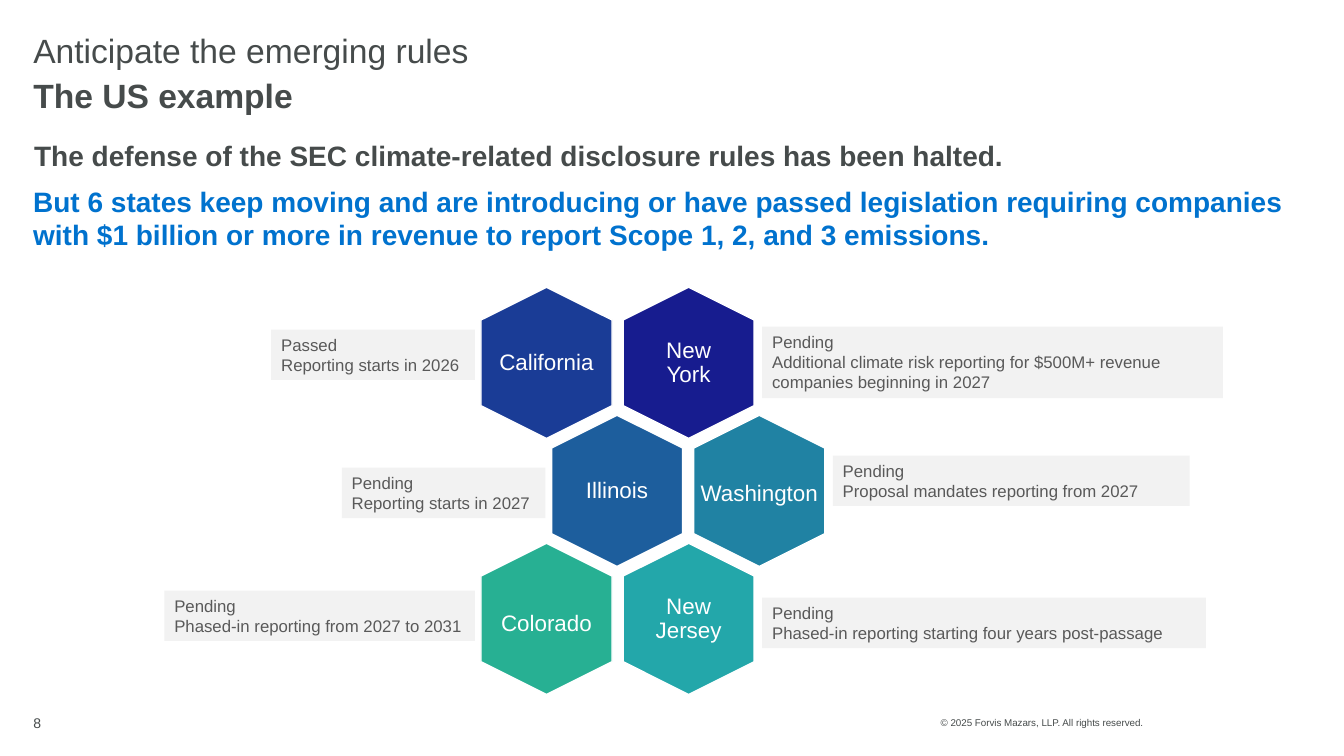
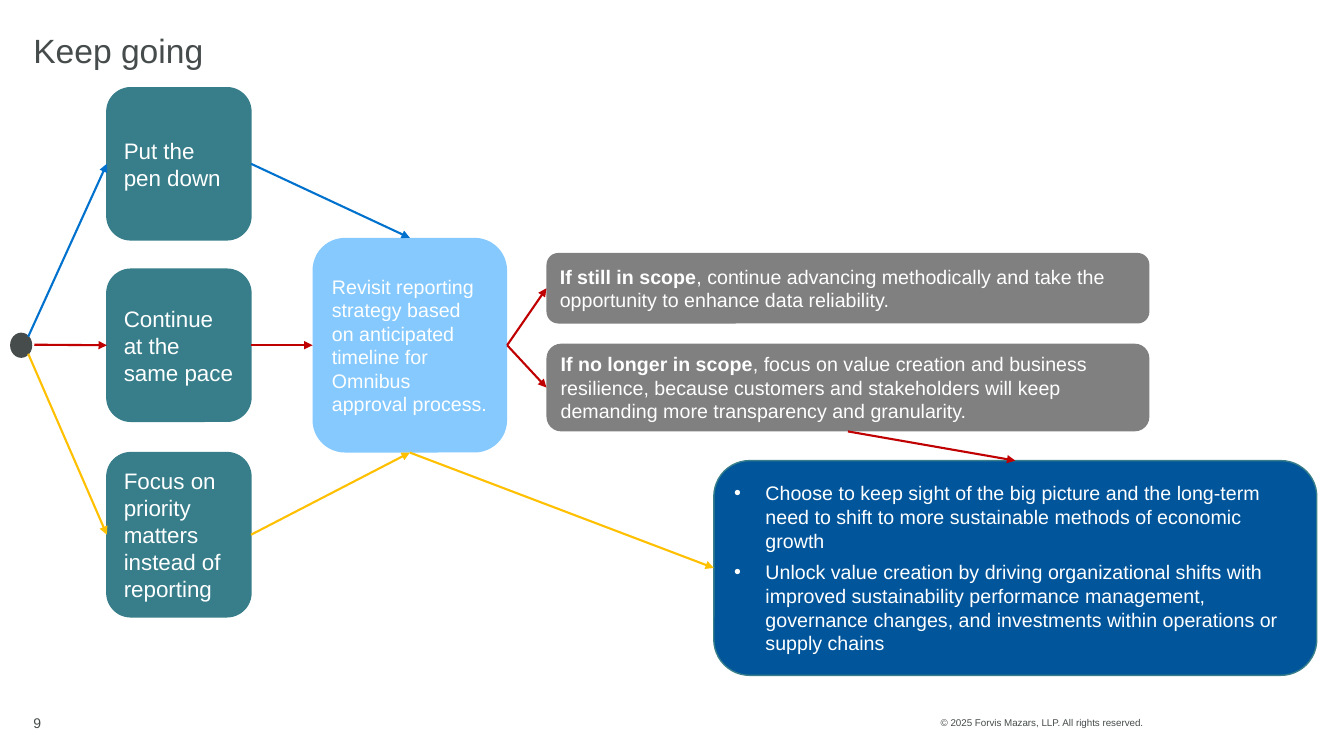
from dataclasses import dataclass
from typing import NamedTuple, Optional

from lxml import etree
from pptx import Presentation
from pptx import util as u
from pptx.dml.color import RGBColor
from pptx.enum import shapes, text
from pptx.oxml import ns

SHAPE = shapes.MSO_SHAPE
MIDDLE, UPPER = text.MSO_ANCHOR.MIDDLE, text.MSO_ANCHOR.TOP
TOP, LEFT, BOTTOM, RIGHT = range(4)


@dataclass(frozen=True)
class Theme:
    font: str = "Arial"
    ink: str = "464B4B"
    white: str = "FFFFFF"
    note_ink: str = "595959"
    note_fill: str = "F2F2F2"
    teal: str = "377E8A"
    sky: str = "85C9FF"
    grey: str = "808080"
    navy: str = "00559B"
    blue: str = "0072CE"
    red: str = "C00000"
    yellow: str = "FFC000"
    title_size: int = 24
    lead_size: int = 20
    label_size: int = 16
    body_size: int = 14
    note_size: int = 12
    page_size: int = 10
    legal_size: int = 7


THEME = Theme()
COPYRIGHT = "© 2025 Forvis Mazars, LLP. All rights reserved."
FIRST_PAGE = 8


class Area(NamedTuple):
    left: float
    top: float
    width: float
    height: float

    def inches(self) -> list:
        return [u.Inches(value) for value in self]


class Span(NamedTuple):
    text: str
    bold: bool = False


@dataclass(frozen=True)
class Style:
    size: int
    color: str
    anchor: text.MSO_ANCHOR = MIDDLE
    align: text.PP_ALIGN = text.PP_ALIGN.LEFT
    inset: tuple[float, float] = (0.1, 0.05)
    line_spacing: Optional[float] = None
    gap: float = 0
    bullet: bool = False


@dataclass(frozen=True)
class State:
    name: str
    fill: str
    status: str
    detail: str
    note_top: float
    note_width: float
    note_height: float = 0.5
    label_drop: float = 0


@dataclass(frozen=True)
class Step:
    key: str
    area: Area
    fill: str
    size: int
    paragraphs: list[list[Span]]
    line: Optional[str] = None
    bullet: bool = False


@dataclass(frozen=True)
class Arrow:
    """Links two steps; a start given as a point is left unjoined."""
    start: tuple
    end: tuple[str, int]
    color: str


STATES = [
    [State("California", "1A3C96", "Passed", "Reporting starts in 2026", 3.27, 2.02),
     State("New York", "171C8F", "Pending",
           "Additional climate risk reporting for $500M+ revenue companies beginning in 2027",
           3.24, 4.57, 0.71)],
    [State("Illinois", "1D5E9D", "Pending", "Reporting starts in 2027", 4.64, 2.02),
     State("Washington", "2082A3", "Pending", "Proposal mandates reporting from 2027",
           4.52, 3.54, label_drop=0.03)],
    [State("Colorado", "27B093", "Pending", "Phased-in reporting from 2027 to 2031",
           5.86, 3.08, label_drop=0.05),
     State("New Jersey", "23A7AA", "Pending",
           "Phased-in reporting starting four years post-passage", 5.93, 4.4)],
]

STEPS = [
    Step("pause", Area(1.06, 0.87, 1.43, 1.51), THEME.teal, THEME.label_size,
         [[Span("Put the pen down")]], THEME.teal),
    Step("continue", Area(1.06, 2.67, 1.43, 1.51), THEME.teal, THEME.label_size,
         [[Span("Continue at the same pace")]], THEME.teal),
    Step("focus", Area(1.06, 4.49, 1.43, 1.63), THEME.teal, THEME.label_size,
         [[Span("Focus on priority matters instead of reporting")]], THEME.teal),
    Step("revisit", Area(3.1, 2.36, 1.93, 2.13), THEME.sky, THEME.body_size,
         [[Span("Revisit reporting strategy based on anticipated timeline for "
                "Omnibus approval process.")]]),
    Step("in scope", Area(5.42, 2.51, 5.98, 0.7), THEME.grey, THEME.body_size,
         [[Span("If still in scope", True),
           Span(", continue advancing methodically and take the opportunity to "
                "enhance data reliability.")]]),
    Step("out of scope", Area(5.42, 3.41, 5.98, 0.87), THEME.grey, THEME.body_size,
         [[Span("If no longer in scope", True),
           Span(", focus on value creation and business resilience, because customers "
                "and stakeholders will keep demanding more transparency and granularity.")]]),
    Step("value", Area(7.08, 4.57, 5.98, 2.13), THEME.navy, THEME.body_size,
         [[Span("Choose to keep sight of the big picture and the long-term need to shift "
                "to more sustainable methods of economic growth")],
          [Span("Unlock value creation by driving organizational shifts with improved "
                "sustainability performance management, governance changes, and "
                "investments within operations or supply chains")]],
         THEME.teal, bullet=True),
]

ARROWS = [
    Arrow((0.28, 3.34), ("pause", LEFT), THEME.blue),
    Arrow((0.34, 3.42), ("continue", LEFT), THEME.red),
    Arrow((0.28, 3.51), ("focus", LEFT), THEME.yellow),
    Arrow(("pause", RIGHT), ("revisit", TOP), THEME.blue),
    Arrow(("continue", RIGHT), ("revisit", LEFT), THEME.red),
    Arrow(("focus", RIGHT), ("revisit", BOTTOM), THEME.yellow),
    Arrow(("revisit", RIGHT), ("in scope", LEFT), THEME.red),
    Arrow(("revisit", RIGHT), ("out of scope", LEFT), THEME.red),
    Arrow(("revisit", BOTTOM), ("value", LEFT), THEME.yellow),
    Arrow(("out of scope", BOTTOM), ("value", TOP), THEME.red),
]


def rgb(color: str) -> RGBColor:
    return RGBColor.from_string(color)


def add_bullet(para) -> None:
    properties = para._p.get_or_add_pPr()
    properties.set("marL", str(u.Inches(0.31)))
    properties.set("indent", str(u.Inches(-0.31)))
    etree.SubElement(properties, ns.qn("a:buFont")).set("typeface", THEME.font)
    etree.SubElement(properties, ns.qn("a:buChar")).set("char", "•")


def write(shape, paragraphs: list[list[Span]], style: Style) -> None:
    frame = shape.text_frame
    frame.word_wrap = True
    frame.vertical_anchor = style.anchor
    frame.margin_left = frame.margin_right = u.Inches(style.inset[0])
    frame.margin_top = frame.margin_bottom = u.Inches(style.inset[1])
    for index, spans in enumerate(paragraphs):
        para = frame.add_paragraph() if index else frame.paragraphs[0]
        if style.bullet:
            add_bullet(para)
        para.alignment = style.align
        if style.line_spacing:
            para.line_spacing = style.line_spacing
        if style.gap:
            para.space_after = u.Pt(style.gap)
            if index:
                para.space_before = u.Pt(style.gap)
        for span in spans:
            run = para.add_run()
            run.text = span.text
            run.font.name = THEME.font
            run.font.size = u.Pt(style.size)
            run.font.bold = span.bold
            run.font.color.rgb = rgb(style.color)


def add_label(page, area: Area, words: str, style: Style, bold: bool = False) -> None:
    write(page.shapes.add_textbox(*area.inches()), [[Span(words, bold)]], style)


def add_block(page, kind, area: Area, fill: str, line: Optional[str] = None):
    block = page.shapes.add_shape(kind, *area.inches())
    block.shadow.inherit = False
    block.fill.solid()
    block.fill.fore_color.rgb = rgb(fill)
    if line:
        block.line.color.rgb = rgb(line)
        block.line.width = u.Pt(1)
    else:
        block.line.fill.background()
    return block


def add_page(deck, title: str):
    """Add a blank page with its title, page number and copyright line."""
    page = deck.slides.add_slide(deck.slide_layouts[6])
    number = str(FIRST_PAGE + len(deck.slides) - 1)
    add_label(page, Area(0.33, 0.33, 9.52, 0.39), title,
              Style(THEME.title_size, THEME.ink, inset=(0, 0), line_spacing=0.9))
    add_label(page, Area(0.33, 7.02, 0.98, 0.3), number,
              Style(THEME.page_size, THEME.ink, inset=(0, 0.05)))
    add_label(page, Area(9.33, 7.02, 2.2, 0.3), COPYRIGHT,
              Style(THEME.legal_size, THEME.ink, inset=(0, 0.05)))
    return page


def add_state(page, state: State, row: int, column: int) -> None:
    """Draw a hexagon, its label and the note on its outer side."""
    long_side, short_side = 1.5, 1.3
    center_x = 5.42 + 1.41 * column + 0.7 * (row % 2)
    center_y = 3.6 + 1.27 * row
    hexagon = add_block(page, SHAPE.HEXAGON,
                        Area(center_x - long_side / 2, center_y - short_side / 2,
                             long_side, short_side), state.fill, THEME.white)
    hexagon.rotation = 90

    label_width = 0.9 if " " in state.name else 1.41
    add_label(page, Area(center_x - label_width / 2, center_y - 0.51 + state.label_drop,
                         label_width, 1.03), state.name,
              Style(THEME.label_size, THEME.white, align=text.PP_ALIGN.CENTER,
                    inset=(0.07, 0.07), line_spacing=0.9))

    if column == 0:
        note_left = center_x - short_side / 2 - 0.06 - state.note_width
    else:
        note_left = center_x + short_side / 2 + 0.08
    note = add_block(page, SHAPE.RECTANGLE,
                     Area(note_left, state.note_top, state.note_width, state.note_height),
                     THEME.note_fill)
    write(note, [[Span(state.status)], [Span(state.detail)]],
          Style(THEME.note_size, THEME.note_ink, UPPER))


def add_arrow(page, arrow: Arrow, boxes: dict) -> None:
    joined = arrow.start[0] in boxes
    x, y = (0, 0) if joined else arrow.start
    line = page.shapes.add_connector(shapes.MSO_CONNECTOR.STRAIGHT,
                                     u.Inches(x), u.Inches(y), u.Inches(x), u.Inches(y))
    if joined:
        line.begin_connect(boxes[arrow.start[0]], arrow.start[1])
    line.end_connect(boxes[arrow.end[0]], arrow.end[1])
    line.line.color.rgb = rgb(arrow.color)
    line.line.width = u.Pt(1.5)
    etree.SubElement(line.line._get_or_add_ln(), ns.qn("a:tailEnd")).set("type", "triangle")
    etree.SubElement(line._element.spPr, ns.qn("a:effectLst"))


def build_states_page(deck) -> None:
    page = add_page(deck, "Anticipate the emerging rules")
    add_label(page, Area(0.33, 0.74, 6.18, 0.39), "The US example",
              Style(THEME.title_size, THEME.ink, inset=(0, 0), line_spacing=1.05), True)
    add_label(page, Area(0.24, 1.32, 10.59, 0.44),
              "The defense of the SEC climate-related disclosure rules has been halted.",
              Style(THEME.lead_size, THEME.ink, UPPER), True)
    add_label(page, Area(0.23, 1.78, 12.68, 0.77),
              "But 6 states keep moving and are introducing or have passed legislation "
              "requiring companies with $1 billion or more in revenue to report "
              "Scope 1, 2, and 3 emissions.",
              Style(THEME.lead_size, THEME.blue, UPPER), True)
    for row, pair in enumerate(STATES):
        for column, state in enumerate(pair):
            add_state(page, state, row, column)


def build_paths_page(deck) -> None:
    page = add_page(deck, "Keep going")
    boxes = {}
    for step in STEPS:
        box = add_block(page, SHAPE.ROUNDED_RECTANGLE, step.area, step.fill, step.line)
        write(box, step.paragraphs,
              Style(step.size, THEME.white, gap=3 if step.bullet else 0, bullet=step.bullet))
        boxes[step.key] = box
    add_block(page, SHAPE.OVAL, Area(0.1, 3.3, 0.22, 0.25), THEME.ink)
    for arrow in ARROWS:
        add_arrow(page, arrow, boxes)


def main() -> None:
    deck = Presentation()
    deck.slide_width, deck.slide_height = u.Inches(13.33), u.Inches(7.5)
    build_states_page(deck)
    build_paths_page(deck)
    deck.save("out.pptx")


if __name__ == "__main__":
    main()
